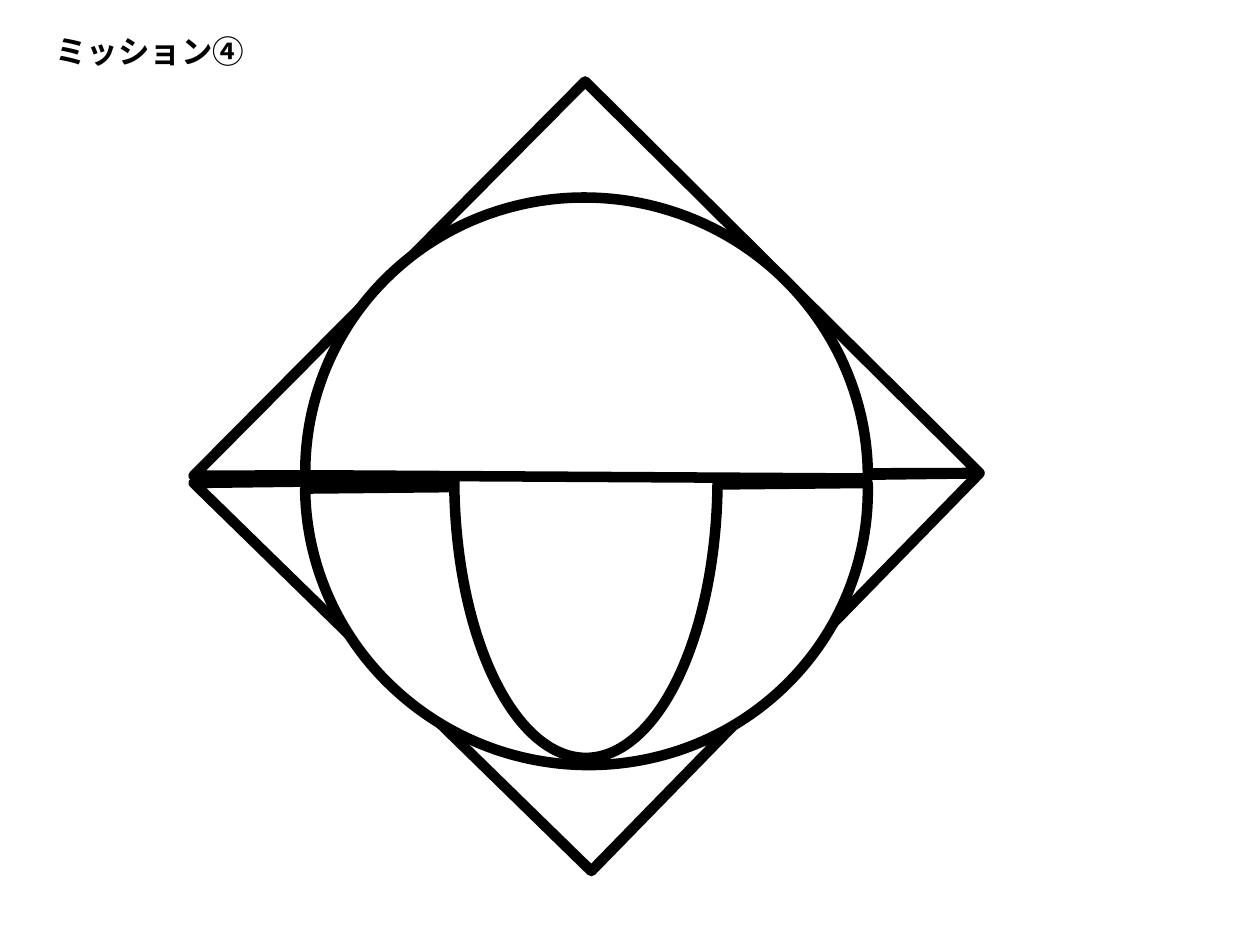
from dataclasses import dataclass

from lxml import etree
from pptx import Presentation
from pptx import util as u
from pptx.dml.color import RGBColor
from pptx.enum import shapes, text
from pptx.oxml.ns import qn

COLORS = {"paper": "FFFFFF", "ink": "000000"}
FONT = "Noto Sans CJK JP"
CELL = u.Inches(0.1)  # grid of 100 columns by 75 rows
COLUMNS, ROWS = 100, 75
HALF_DISC = (45.38, 153.98)  # chord angles of one half of the circle
KIND = shapes.MSO_SHAPE


@dataclass
class Figure:
    kind: KIND
    column: float
    row: float
    columns: float
    rows: float
    turn: float
    angles: tuple[float, ...] = ()


# Back to front: outer square, lower half circle, inner oval, upper half circle
FIGURES = [
    Figure(KIND.RIGHT_TRIANGLE, 24.5, 15.9, 44.1, 44.1, 314.3),
    Figure(KIND.RIGHT_TRIANGLE, 24.5, 15.6, 44.1, 44.1, 134.8),
    Figure(KIND.CHORD, 24.6, 16.4, 43.9, 44.7, 283.3, HALF_DISC),
    Figure(KIND.OVAL, 24.3, 27.5, 44.4, 20.9, 90),
    Figure(KIND.CHORD, 24.6, 15.3, 43.9, 44.7, 104.2, HALF_DISC),
]


def color(name: str) -> RGBColor:
    return RGBColor.from_string(COLORS[name])


def grid(*cells: float) -> list[int]:
    return [round(cell * CELL) for cell in cells]


def apply(target, values: dict) -> None:
    for name, value in values.items():
        setattr(target, name, value)


def draw_figure(group, figure: Figure) -> None:
    box = grid(figure.column, figure.row, figure.columns, figure.rows)
    shape = group.shapes.add_shape(figure.kind, *box)
    shape.rotation = figure.turn
    shape.shadow.inherit = False
    for index, angle in enumerate(figure.angles):
        shape.adjustments[index] = angle
    shape.fill.solid()
    shape.fill.fore_color.rgb = color("paper")
    shape.line.color.rgb = color("ink")
    shape.line.width = u.Pt(6)


def write_title(page, words: str) -> None:
    title = page.shapes.title
    left, top, width, height = grid(3.4, 2, 17.2, 7.1)
    apply(title, {"left": left, "top": top, "width": width, "height": height})
    apply(title.text_frame, {
        "word_wrap": False,
        "auto_size": text.MSO_AUTO_SIZE.NONE,
        "vertical_anchor": text.MSO_ANCHOR.TOP,
    })
    para = title.text_frame.paragraphs[0]
    para.alignment = text.PP_ALIGN.LEFT
    span = para.add_run()
    span.text = words
    apply(span.font, {"size": u.Pt(18), "bold": True, "name": FONT})
    span.font.color.rgb = color("ink")
    # Japanese glyphs take the East Asian typeface
    etree.SubElement(span.font._element, qn("a:ea"), typeface=FONT)


def main() -> None:
    deck = Presentation()
    deck.slide_width, deck.slide_height = grid(COLUMNS, ROWS)
    page = deck.slides.add_slide(deck.slide_layouts.get_by_name("Title Only"))

    # Geometric figure
    group = page.shapes.add_group_shape()
    for figure in FIGURES:
        draw_figure(group, figure)

    # Heading
    write_title(page, "ミッション④")
    deck.save("out.pptx")


if __name__ == "__main__":
    main()
